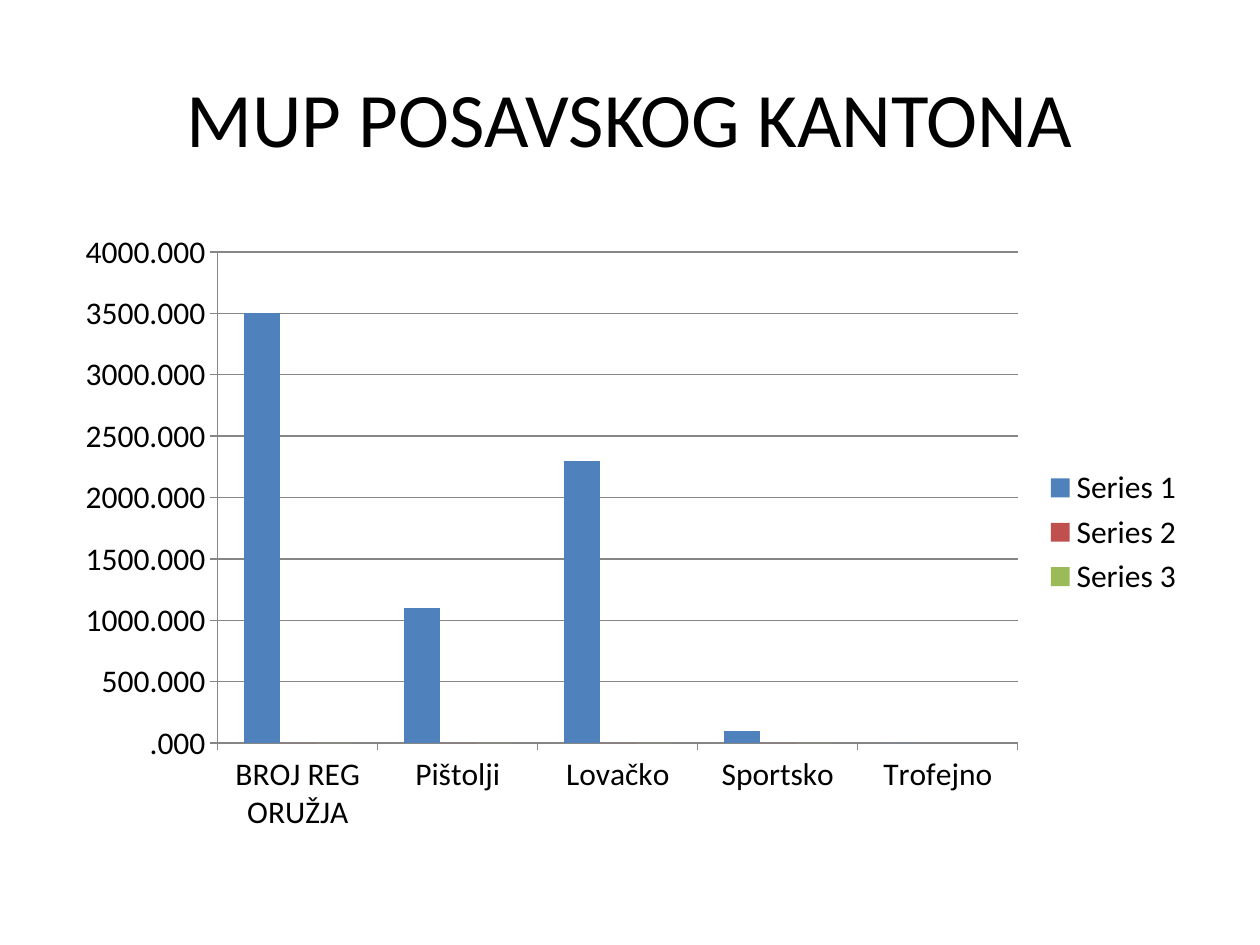
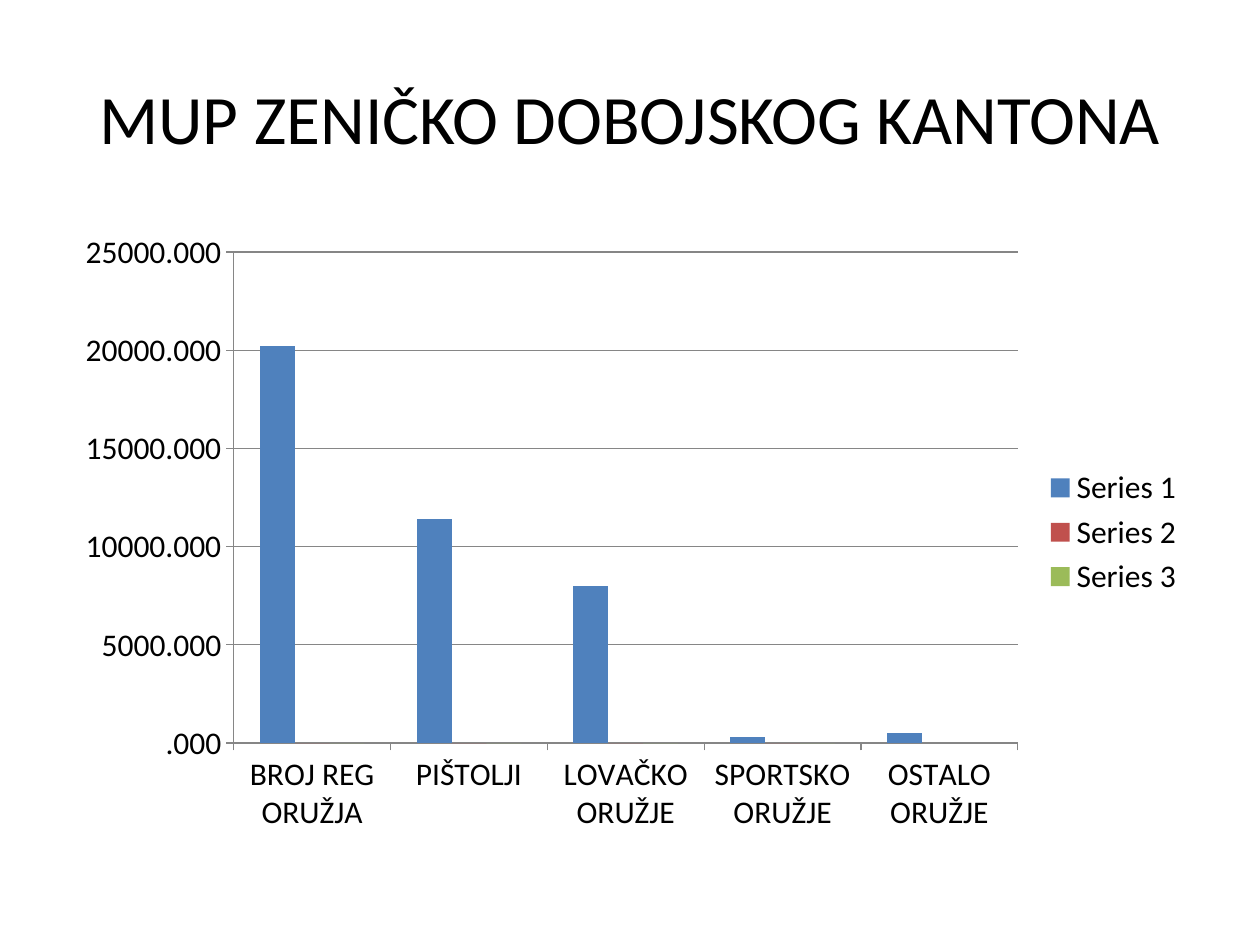
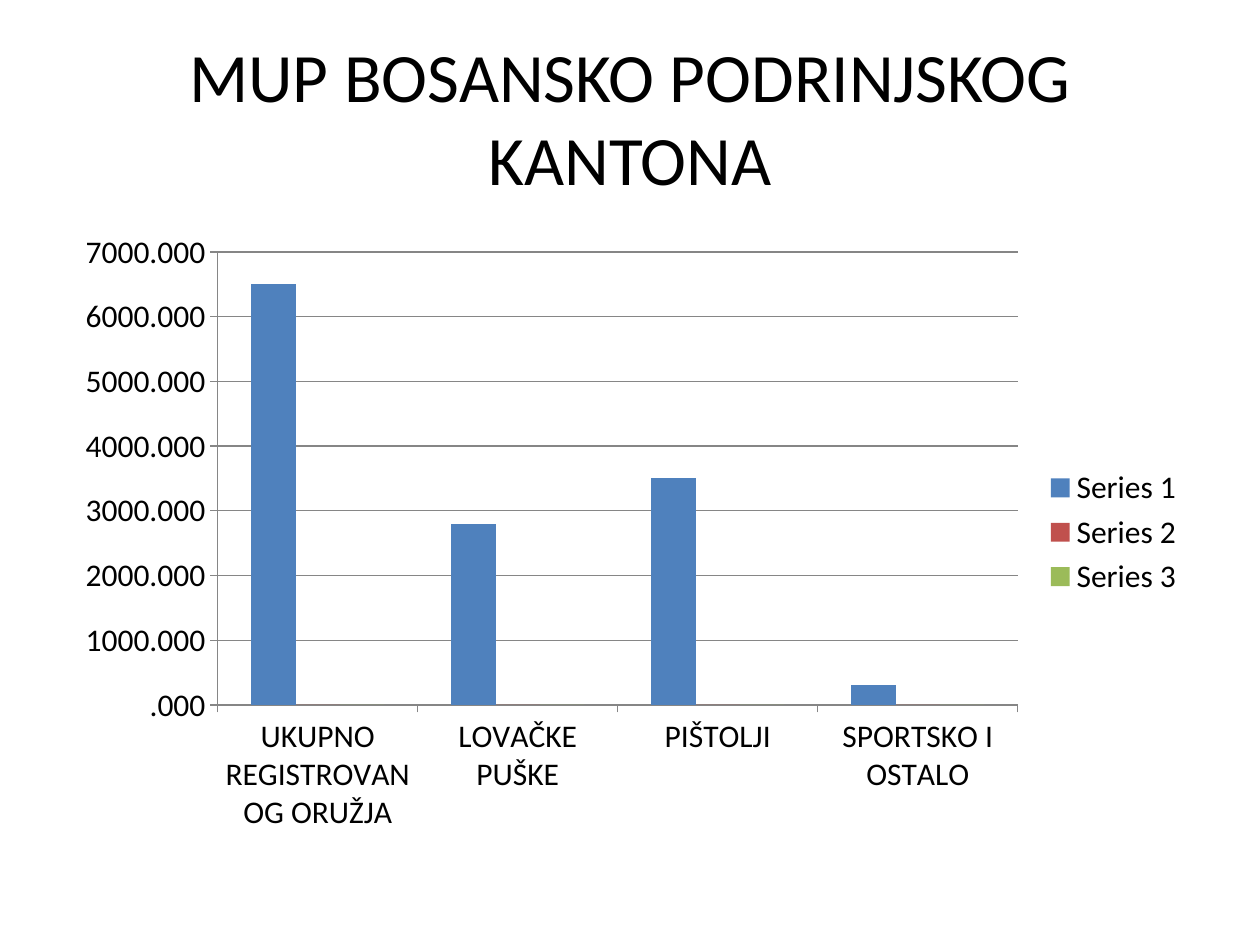
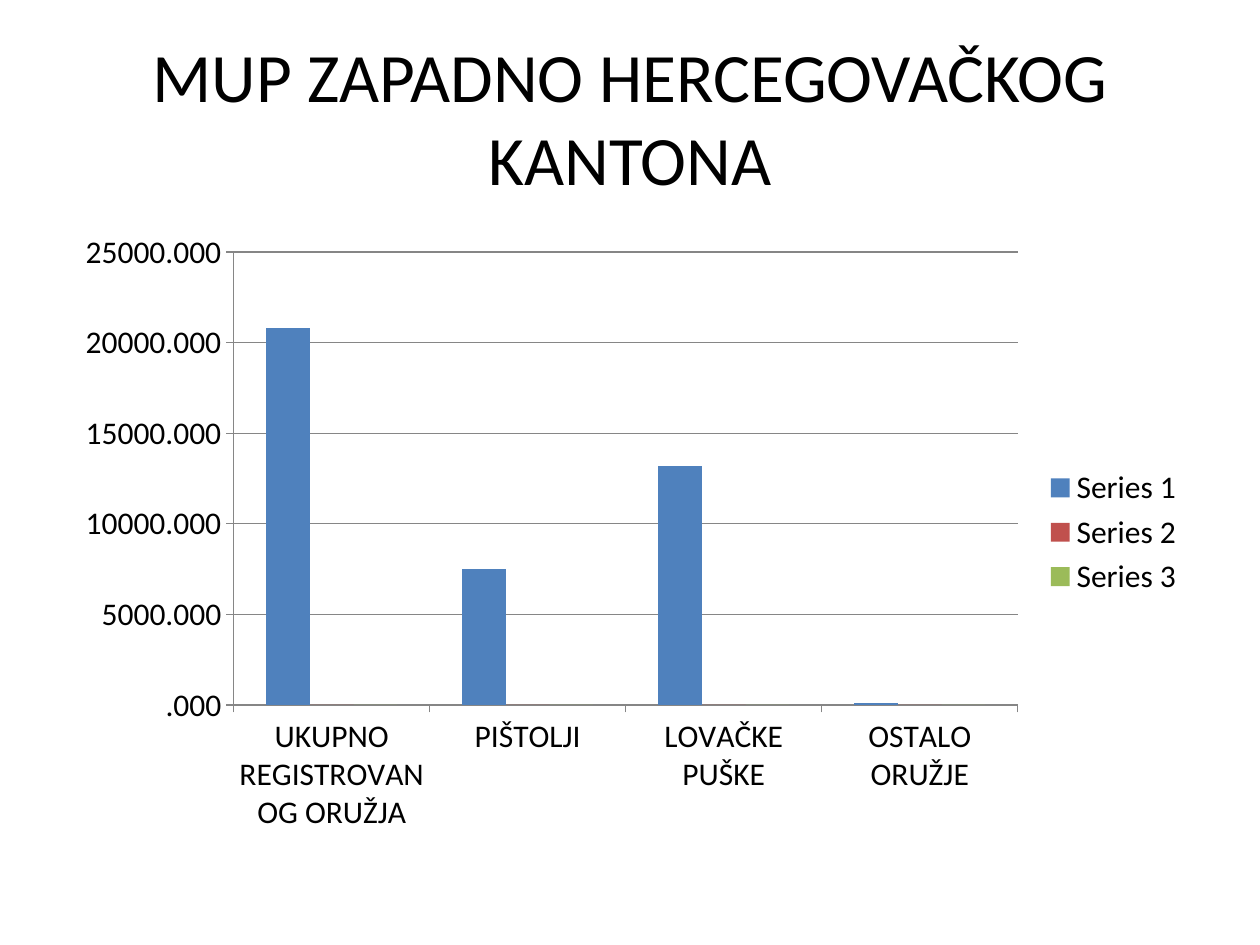
from dataclasses import dataclass

from pptx import Presentation
from pptx.chart.data import CategoryChartData
from pptx.dml.color import RGBColor
from pptx.enum.chart import XL_CHART_TYPE, XL_LEGEND_POSITION, XL_TICK_MARK
from pptx.enum.text import MSO_ANCHOR, MSO_AUTO_SIZE, PP_ALIGN
from pptx.util import Pt

COLUMNS = XL_CHART_TYPE.COLUMN_CLUSTERED
LEGEND_RIGHT = XL_LEGEND_POSITION.RIGHT
TICK_OUTSIDE = XL_TICK_MARK.OUTSIDE
TICK_NONE = XL_TICK_MARK.NONE
MIDDLE = MSO_ANCHOR.MIDDLE
NO_AUTOFIT = MSO_AUTO_SIZE.NONE
CENTER = PP_ALIGN.CENTER

EMU_PER_PX = 9144
SLIDE_SIZE = (1000, 750)
TITLE_BOX = (50, 30, 900, 125)
CHART_BOX = (50, 175, 900, 495)
TITLE_ONLY = 5


@dataclass(frozen=True)
class Theme:
    font: str = "Calibri"
    text: RGBColor = RGBColor(0x00, 0x00, 0x00)
    background: RGBColor = RGBColor(0xFF, 0xFF, 0xFF)
    axis: RGBColor = RGBColor(0x86, 0x86, 0x86)
    series: tuple = (
        RGBColor(0x4F, 0x81, 0xBD),
        RGBColor(0xC0, 0x50, 0x4D),
        RGBColor(0x9B, 0xBB, 0x59),
    )
    title_size: float = 44
    long_title_size: float = 39.6
    chart_size: float = 18
    axis_width: float = 0.75
    value_format: str = "#.##0"


THEME = Theme()

# Title, title size, weapon counts by category, values of the two other series
CANTONS = [
    (
        "MUP POSAVSKOG KANTONA",
        THEME.title_size,
        {"BROJ REG ORUŽJA": 3500, "Pištolji": 1100, "Lovačko": 2300,
         "Sportsko": 100, "Trofejno": 0},
        (0, 0, 0, 0, None),
    ),
    (
        "MUP ZENIČKO DOBOJSKOG KANTONA",
        THEME.long_title_size,
        {"BROJ REG ORUŽJA": 20200, "PIŠTOLJI": 11400, "LOVAČKO ORUŽJE": 8000,
         "SPORTSKO ORUŽJE": 300, "OSTALO ORUŽJE": 500},
        (0, 0, 0, 0, None),
    ),
    (
        "MUP BOSANSKO PODRINJSKOG KANTONA",
        THEME.long_title_size,
        {"UKUPNO REGISTROVANOG ORUŽJA": 6500, "LOVAČKE PUŠKE": 2800,
         "PIŠTOLJI": 3500, "SPORTSKO I OSTALO": 300},
        (0, 0, 0, 0),
    ),
    (
        "MUP ZAPADNO HERCEGOVAČKOG KANTONA",
        THEME.long_title_size,
        {"UKUPNO REGISTROVANOG ORUŽJA": 20800, "PIŠTOLJI": 7500,
         "LOVAČKE PUŠKE": 13200, "OSTALO ORUŽJE": 100},
        (0, 0, 0, 0),
    ),
]


def to_emu(lengths):
    return [length * EMU_PER_PX for length in lengths]


def style_font(font, size):
    font.name = THEME.font
    font.size = Pt(size)
    font.color.rgb = THEME.text


def style_line(line):
    line.color.rgb = THEME.axis
    line.width = Pt(THEME.axis_width)


def place_title(page, box, text, size):
    title = page.shapes.title
    title.left, title.top, title.width, title.height = to_emu(box)
    frame = title.text_frame
    frame.text = text
    frame.word_wrap = True
    frame.auto_size = NO_AUTOFIT
    frame.vertical_anchor = MIDDLE
    para = frame.paragraphs[0]
    para.alignment = CENTER
    style_font(para.runs[0].font, size)


def style_axes(chart):
    for axis in (chart.category_axis, chart.value_axis):
        axis.major_tick_mark = TICK_OUTSIDE
        axis.minor_tick_mark = TICK_NONE
        style_line(axis.format.line)
    values = chart.value_axis
    values.has_major_gridlines = True
    style_line(values.major_gridlines.format.line)
    values.tick_labels.number_format = THEME.value_format
    values.tick_labels.number_format_is_linked = False


def place_chart(page, box, counts, other_values):
    data = CategoryChartData(number_format=THEME.value_format)
    data.categories = list(counts)
    all_values = (counts.values(), other_values, other_values)
    for number, values in enumerate(all_values, start=1):
        data.add_series(f"Series {number}", values)

    chart = page.shapes.add_chart(COLUMNS, *to_emu(box), data).chart
    style_font(chart.font, THEME.chart_size)
    chart.has_title = False
    chart.has_legend = True
    chart.legend.position = LEGEND_RIGHT
    chart.legend.include_in_layout = False
    style_axes(chart)

    plot = chart.plots[0]
    plot.gap_width = 150
    plot.vary_by_categories = False
    for series, color in zip(plot.series, THEME.series):
        series.invert_if_negative = False
        series.format.fill.solid()
        series.format.fill.fore_color.rgb = color


def add_canton_slide(deck, title, title_size, counts, other_values):
    page = deck.slides.add_slide(deck.slide_layouts[TITLE_ONLY])
    place_title(page, TITLE_BOX, title, title_size)
    place_chart(page, CHART_BOX, counts, other_values)


def main():
    deck = Presentation()
    deck.slide_width, deck.slide_height = to_emu(SLIDE_SIZE)
    background = deck.slide_master.background.fill
    background.solid()
    background.fore_color.rgb = THEME.background
    for canton in CANTONS:
        add_canton_slide(deck, *canton)
    deck.save("out.pptx")


if __name__ == "__main__":
    main()
